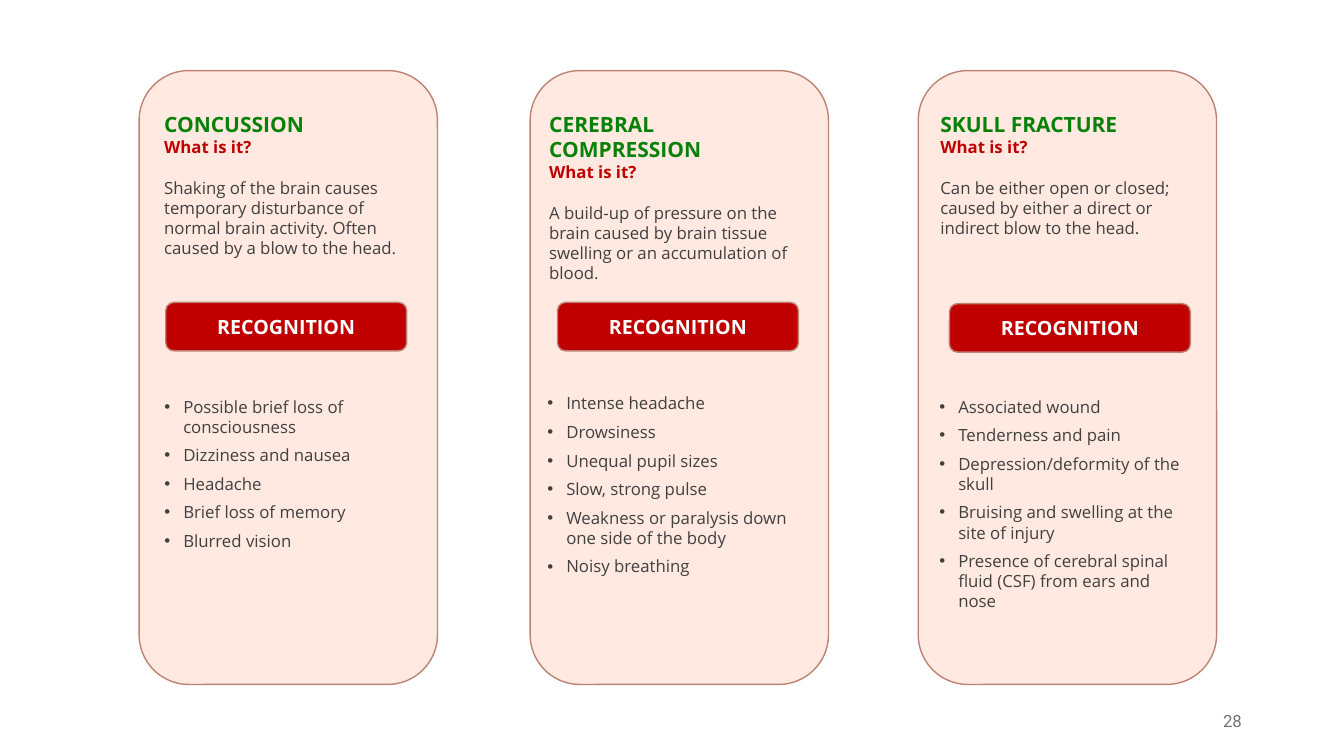
from lxml import etree
from pptx import Presentation
from pptx.dml.color import RGBColor
from pptx.enum import shapes, text
from pptx.oxml import ns
from pptx.util import Pt

PEACH = RGBColor(0xFF, 0xE9, 0xE0)
CLAY = RGBColor(0xBD, 0x82, 0x74)
RED = RGBColor(0xC0, 0x00, 0x00)
GREEN = RGBColor(0x09, 0x81, 0x09)
INK = RGBColor(0x40, 0x40, 0x40)
GREY = RGBColor(0x76, 0x71, 0x71)
WHITE = RGBColor(0xFF, 0xFF, 0xFF)

# Content: each injury, with box = (left, top, width, height) in points
INJURIES = [
    {"name": "CONCUSSION",
     "about": "Shaking of the brain causes temporary disturbance of normal brain "
              "activity. Often caused by a blow to the head.",
     "signs": ["Possible brief loss of consciousness", "Dizziness and nausea",
               "Headache", "Brief loss of memory", "Blurred vision"],
     "card_left": 99.4, "intro_box": (110.2, 76.3, 189.4, 113),
     "badge_at": (118.4, 216), "signs_box": (110.2, 279.4, 189.4, 118.8)},
    {"name": "CEREBRAL COMPRESSION",
     "about": "A build-up of pressure on the brain caused by brain tissue swelling "
              "or an accumulation of blood.",
     "signs": ["Intense headache", "Drowsiness", "Unequal pupil sizes",
               "Slow, strong pulse", "Weakness or paralysis down one side of the body",
               "Noisy breathing"],
     "card_left": 378.7, "intro_box": (385.2, 76.3, 200.9, 113),
     "badge_at": (398.2, 216), "signs_box": (383.8, 277.2, 189.4, 139.7)},
    {"name": "SKULL FRACTURE",
     "about": "Can be either open or closed; caused by either a direct or indirect "
              "blow to the head.",
     "signs": ["Associated wound", "Tenderness and pain",
               "Depression/deformity of the skull",
               "Bruising and swelling at the site of injury",
               "Presence of cerebral spinal fluid (CSF) from ears and nose"],
     "card_left": 655.9, "intro_box": (664.6, 76.3, 195.8, 98),
     "badge_at": (678.2, 216.9), "signs_box": (663.8, 279.4, 189.4, 162.7)},
]
QUESTION = "What is it?"
BADGE = "RECOGNITION"
PAGE = "28"

CARD_TOP, CARD_SIZE = 50.4, (213.1, 438.5)
BADGE_SIZE = (172.1, 34.6)
PAGE_BOX = (678.2, 500.4, 216, 28.8)
BLANK_LINE = 14.4
INDENT = 13.5


def add_run(paragraph, words, size, color, bold=False, font="Open Sans"):
    run = paragraph.add_run()
    run.text = words
    run.font.name, run.font.size, run.font.bold = font, Pt(size), bold
    run.font.color.rgb = color


def add_rounded(slide, left, top, size, fill):
    rounded = slide.shapes.add_shape(shapes.MSO_SHAPE.ROUNDED_RECTANGLE,
                                     *map(Pt, (left, top, *size)))
    rounded.shadow.inherit = False
    rounded.fill.solid()
    rounded.fill.fore_color.rgb = fill
    rounded.line.color.rgb = CLAY
    rounded.line.width = Pt(1)
    return rounded


def add_frame(slide, box):
    frame = slide.shapes.add_textbox(*map(Pt, box)).text_frame
    frame.word_wrap = True
    return frame


def add_intro(slide, injury):
    frame = add_frame(slide, injury["intro_box"])
    add_run(frame.paragraphs[0], injury["name"], 15, GREEN, True)
    question = frame.add_paragraph()
    question.space_after = Pt(BLANK_LINE)
    add_run(question, QUESTION, 12, RED, True)
    add_run(frame.add_paragraph(), injury["about"], 12, INK)


def fill_signs(slide, body, injury):
    # Bring the list in front of its card
    slide.shapes._spTree.append(body.element)
    body.left, body.top, body.width, body.height = map(Pt, injury["signs_box"])
    frame = body.text_frame
    frame.word_wrap = True
    frame.auto_size = text.MSO_AUTO_SIZE.NONE
    frame.vertical_anchor = text.MSO_ANCHOR.TOP
    for i, sign in enumerate(injury["signs"]):
        item = frame.add_paragraph() if i else frame.paragraphs[0]
        item.space_before, item.space_after = Pt(0), Pt(6)
        add_run(item, sign, 12, INK)
        props = item._p.get_or_add_pPr()
        props.set("marL", str(Pt(INDENT)))
        props.set("indent", str(-Pt(INDENT)))
        etree.SubElement(props, ns.qn("a:buFont"), typeface="Arial")
        etree.SubElement(props, ns.qn("a:buChar"), char="•")


def main():
    deck = Presentation()
    deck.slide_width, deck.slide_height = Pt(960), Pt(540)
    slide = deck.slides.add_slide(deck.slide_layouts.get_by_name("Comparison"))

    # Three body placeholders hold the lists; the title and the fourth go
    title, *bodies, spare = slide.placeholders
    for unused in (title, spare):
        unused.element.getparent().remove(unused.element)

    # Page number
    frame = add_frame(slide, PAGE_BOX)
    frame.vertical_anchor = text.MSO_ANCHOR.MIDDLE
    frame.paragraphs[0].alignment = text.PP_ALIGN.RIGHT
    add_run(frame.paragraphs[0], PAGE, 12, GREY, font="Roboto")

    # One card per injury
    for injury, body in zip(INJURIES, bodies):
        add_rounded(slide, injury["card_left"], CARD_TOP, CARD_SIZE, PEACH)
        add_intro(slide, injury)
        badge = add_rounded(slide, *injury["badge_at"], BADGE_SIZE, RED)
        label = badge.text_frame.paragraphs[0]
        label.alignment = text.PP_ALIGN.CENTER
        add_run(label, BADGE, 14, WHITE, True)
        fill_signs(slide, body, injury)

    deck.save("out.pptx")


if __name__ == "__main__":
    main()
